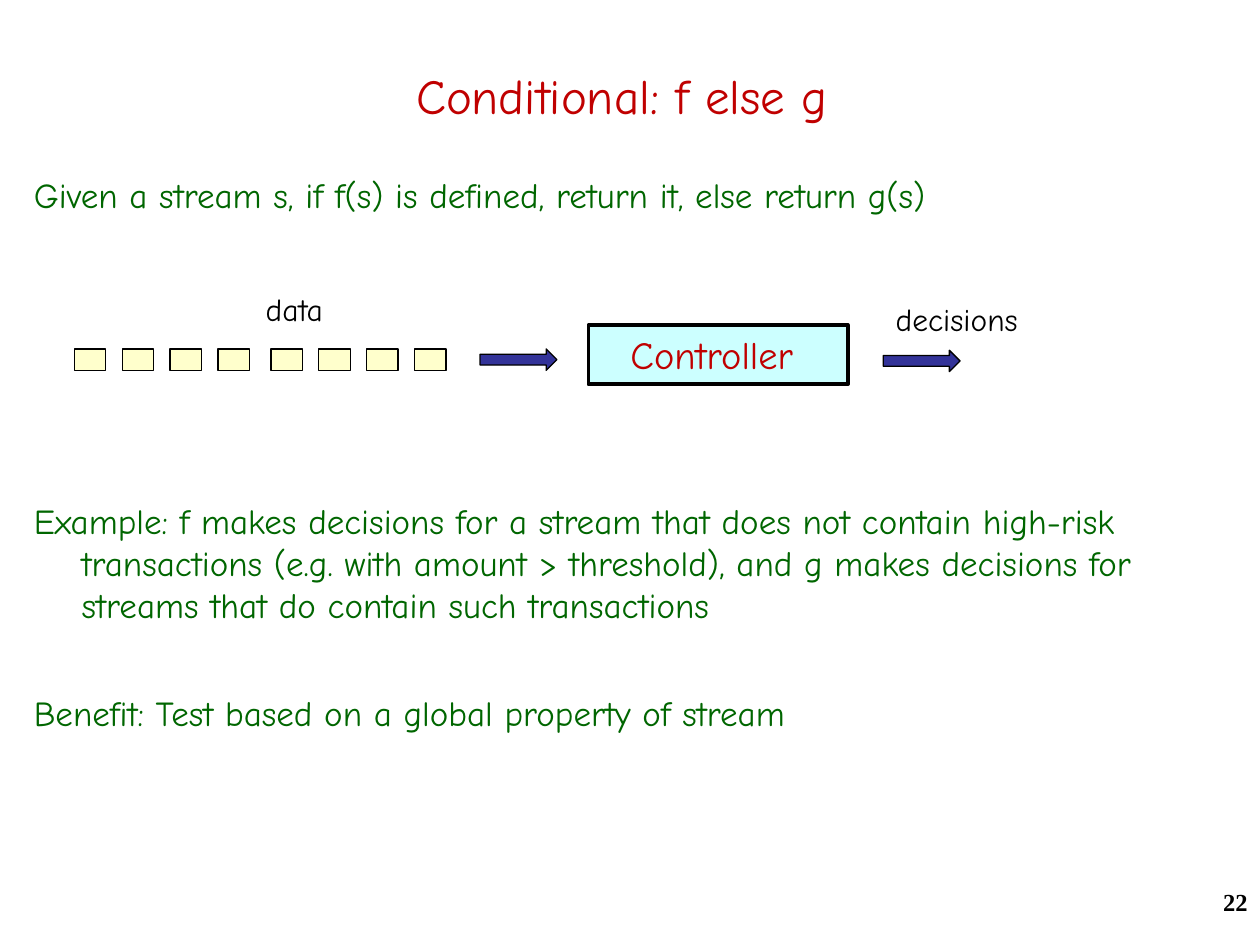
"""Build the slide that explains the conditional combinator."""
from pptx import Presentation, util as u
from pptx.dml.color import RGBColor
from pptx.enum import shapes, text

RED, GREEN, BLACK = "C00000", "006600", "000000"
CYAN, CREAM, NAVY = "CCFFFF", "FFFFCC", "333399"
LEFT, CENTER, RIGHT = text.PP_ALIGN.LEFT, text.PP_ALIGN.CENTER, text.PP_ALIGN.RIGHT


def color(hex_value):
    return RGBColor.from_string(hex_value)


class SlideBuilder:
    """Hold the text style and the current slide, and add elements to it."""

    def __init__(self, slide, font="Comic Neue"):
        self.slide = slide
        self.font = font

    def set_text(self, paragraph, words, size, ink, align=LEFT, font=None, bold=False):
        paragraph.text = words
        paragraph.alignment = align
        paragraph.font.name = font or self.font
        paragraph.font.size = u.Pt(size)
        paragraph.font.bold = bold
        paragraph.font.color.rgb = color(ink)

    def frame(self, box, wrap=True):
        shape = self.slide.shapes.add_textbox(*map(u.Inches, box))
        shape.text_frame.word_wrap = wrap
        return shape.text_frame

    def label(self, box, words, size, ink, wrap=True, anchor=text.MSO_ANCHOR.TOP, **style):
        frame = self.frame(box, wrap)
        frame.vertical_anchor = anchor
        self.set_text(frame.paragraphs[0], words, size, ink, **style)

    def body(self, box, items, size, ink, indent):
        frame = self.frame(box)
        for index, (words, space_before) in enumerate(items):
            paragraph = frame.add_paragraph() if index else frame.paragraphs[0]
            self.set_text(paragraph, words, size, ink)
            paragraph.space_before = u.Pt(space_before)
            properties = paragraph._p.get_or_add_pPr()
            properties.set("marL", str(u.Inches(indent)))
            properties.set("indent", str(u.Inches(-indent)))

    def block(self, kind, box, fill, line_width=0.75):
        shape = self.slide.shapes.add_shape(kind, *map(u.Inches, box))
        shape.shadow.inherit = False
        shape.fill.solid()
        shape.fill.fore_color.rgb = color(fill)
        shape.line.color.rgb = color(BLACK)
        shape.line.width = u.Pt(line_width)
        return shape

    def titled_block(self, box, words, size, ink, fill, line_width):
        shape = self.block(shapes.MSO_SHAPE.RECTANGLE, box, fill, line_width)
        shape.text_frame.vertical_anchor = text.MSO_ANCHOR.TOP
        self.set_text(shape.text_frame.paragraphs[0], words, size, ink, CENTER)


def main():
    presentation = Presentation()
    presentation.slide_width = u.Inches(10)
    presentation.slide_height = u.Inches(7.5)
    builder = SlideBuilder(presentation.slides.add_slide(presentation.slide_layouts[6]))

    builder.label((0.75, 0.42, 8.5, 0.67), "Conditional: f else g ", 28, RED,
                  anchor=text.MSO_ANCHOR.MIDDLE, align=CENTER)
    builder.body((0.17, 1.33, 9.83, 5.67), [
        ("Given a stream s, if f(s) is defined, return it, else return g(s)", 0),
        ("Example: f makes decisions for a stream that does not contain high-risk "
         "transactions (e.g. with amount > threshold), and g makes decisions for "
         "streams that do contain such transactions", 162),
        ("Benefit: Test based on a global property of stream", 38),
    ], 20, GREEN, 0.38)
    builder.label((7.92, 6.99, 2.08, 0.5), "22", 14, BLACK,
                  align=RIGHT, font="Times New Roman", bold=True)

    builder.titled_block((4.67, 2.58, 2.06, 0.47), "Controller ", 22, RED, CYAN, 2)
    for group_left in (0.59, 2.15):
        for column in range(4):
            builder.block(shapes.MSO_SHAPE.RECTANGLE,
                          (group_left + 0.38 * column, 2.77, 0.25, 0.17), CREAM)
    for left, top in ((3.81, 2.77), (7.01, 2.78)):
        builder.block(shapes.MSO_SHAPE.RIGHT_ARROW, (left, top, 0.61, 0.17), NAVY)
    builder.label((2.01, 2.25, 0.73, 0.4), "data", 18, BLACK, wrap=False)
    builder.label((7.01, 2.33, 1.27, 0.4), "decisions", 18, BLACK, wrap=False)

    presentation.save("out.pptx")


if __name__ == "__main__":
    main()
